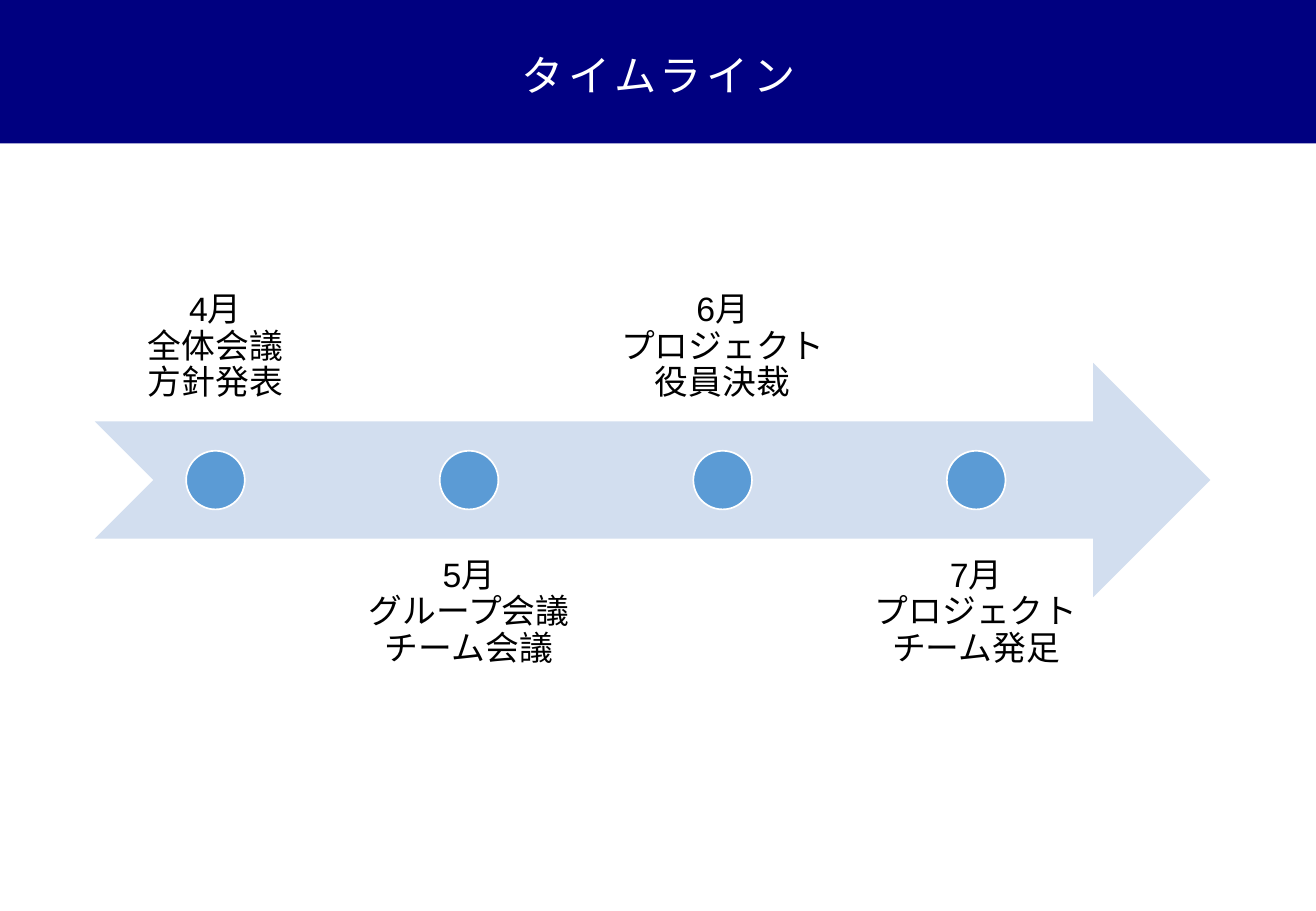
"""Build a one-slide project timeline with python-pptx."""
from dataclasses import dataclass

from lxml import etree
from pptx import Presentation
from pptx.dml.color import RGBColor
from pptx.enum.shapes import MSO_SHAPE
from pptx.enum.text import MSO_ANCHOR, MSO_AUTO_SIZE, PP_ALIGN
from pptx.oxml.ns import qn
from pptx.util import Inches, Pt

RECTANGLE = MSO_SHAPE.RECTANGLE
OVAL = MSO_SHAPE.OVAL
NOTCHED_ARROW = MSO_SHAPE.NOTCHED_RIGHT_ARROW
TOP, BOTTOM = MSO_ANCHOR.TOP, MSO_ANCHOR.BOTTOM
FIT_SHAPE = MSO_AUTO_SIZE.SHAPE_TO_FIT_TEXT
CENTER = PP_ALIGN.CENTER

WIDTH, HEIGHT = 10.83, 7.5
GRID_LEFT, GRID_TOP = 0.78, 1.54
COLUMN, ROW = 6.26 / 3, 1.93 / 4
LABEL_COLUMNS = 1 / 1.05

MILESTONES = [
    "4月\n全体会議\n方針発表",
    "5月\nグループ会議チーム会議",
    "6月\nプロジェクト役員決裁",
    "7月\nプロジェクトチーム発足",
]


@dataclass(frozen=True)
class Theme:
    """Colours, fonts and type sizes of the slide."""
    header: str = "000080"
    arrow: str = "D2DEEF"
    dot: str = "5B9BD5"
    light: str = "FFFFFF"
    dark: str = "000000"
    title_font: str = "Noto Sans CJK JP"
    label_font: str = "Arial"
    title_size: int = 25
    label_size: int = 20
    title_spacing: int = 3


def share(left, top, width, height):
    """Turn percentages of the slide into a frame."""
    return (Inches(WIDTH * left / 100), Inches(HEIGHT * top / 100),
            Inches(WIDTH * width / 100), Inches(HEIGHT * height / 100))


def grid(column, row, columns, rows):
    """Turn grid columns and rows into a frame."""
    return (Inches(GRID_LEFT + column * COLUMN), Inches(GRID_TOP + row * ROW),
            Inches(columns * COLUMN), Inches(rows * ROW))


class TimelineSlide:
    """Draw timeline elements on one slide in one theme."""

    def __init__(self, slide, theme):
        """Keep the slide and its theme."""
        self.slide = slide
        self.theme = theme

    def shape(self, kind, frame, fill, line=None):
        """Add a filled shape with an optional thin outline."""
        shape = self.slide.shapes.add_shape(kind, *frame)
        shape.shadow.inherit = False
        shape.fill.solid()
        shape.fill.fore_color.rgb = RGBColor.from_string(fill)
        if line:
            shape.line.color.rgb = RGBColor.from_string(line)
            shape.line.width = Pt(1)
        else:
            shape.line.fill.background()

    def text(self, text, frame, color, font, frame_format, line_spacing=1.0):
        """Add a centred text box and return its runs."""
        text_frame = self.slide.shapes.add_textbox(*frame).text_frame
        for name, value in frame_format.items():
            setattr(text_frame, name, value)
        paragraph = text_frame.paragraphs[0]
        paragraph.text = text
        paragraph.alignment = CENTER
        paragraph.line_spacing = line_spacing
        for run in paragraph.runs:
            for name, value in font.items():
                setattr(run.font, name, value)
            run.font.color.rgb = RGBColor.from_string(color)
        return paragraph.runs

    def header(self, title):
        """Add the title band and its spaced title."""
        theme = self.theme
        self.shape(RECTANGLE, share(0, 0, 100, 15.73), theme.header)
        font = {"name": theme.title_font, "size": Pt(theme.title_size)}
        frame_format = {"word_wrap": False, "auto_size": FIT_SHAPE}
        for run in self.text(title, share(38.23, 4.8, 23.64, 6.93),
                             theme.light, font, frame_format):
            properties = run.font._element
            properties.set("spc", str(theme.title_spacing * 100))
            etree.SubElement(properties, qn("a:ea"), typeface=theme.title_font)

    def arrow(self):
        """Add the arrow that carries the milestones."""
        self.shape(NOTCHED_ARROW, grid(0, 3, 4.4, 4), self.theme.arrow)

    def milestone(self, index, text):
        """Add a dot and its label, above and below the arrow in turn."""
        theme = self.theme
        above = index % 2 == 0
        font = {"name": theme.label_font, "size": Pt(theme.label_size)}
        frame_format = {
            "word_wrap": True,
            "vertical_anchor": BOTTOM if above else TOP,
            "margin_left": Inches(0.15),
            "margin_right": Inches(0.15),
            "margin_top": Inches(0.16),
            "margin_bottom": Inches(0.16),
        }
        self.text(text, grid(index, 0 if above else 6, LABEL_COLUMNS, 4),
                  theme.dark, font, frame_format, 0.9)
        dot_columns = ROW / COLUMN
        dot_left = index + (LABEL_COLUMNS - dot_columns) / 2
        self.shape(OVAL, grid(dot_left, 4.5, dot_columns, 1),
                   theme.dot, theme.light)


def main():
    """Build the presentation and save it."""
    presentation = Presentation()
    presentation.slide_width = Inches(WIDTH)
    presentation.slide_height = Inches(HEIGHT)
    slide = presentation.slides.add_slide(presentation.slide_layouts[6])
    timeline = TimelineSlide(slide, Theme())
    timeline.header("タイムライン")
    timeline.arrow()
    for index, text in enumerate(MILESTONES):
        timeline.milestone(index, text)
    presentation.save("out.pptx")


if __name__ == "__main__":
    main()
